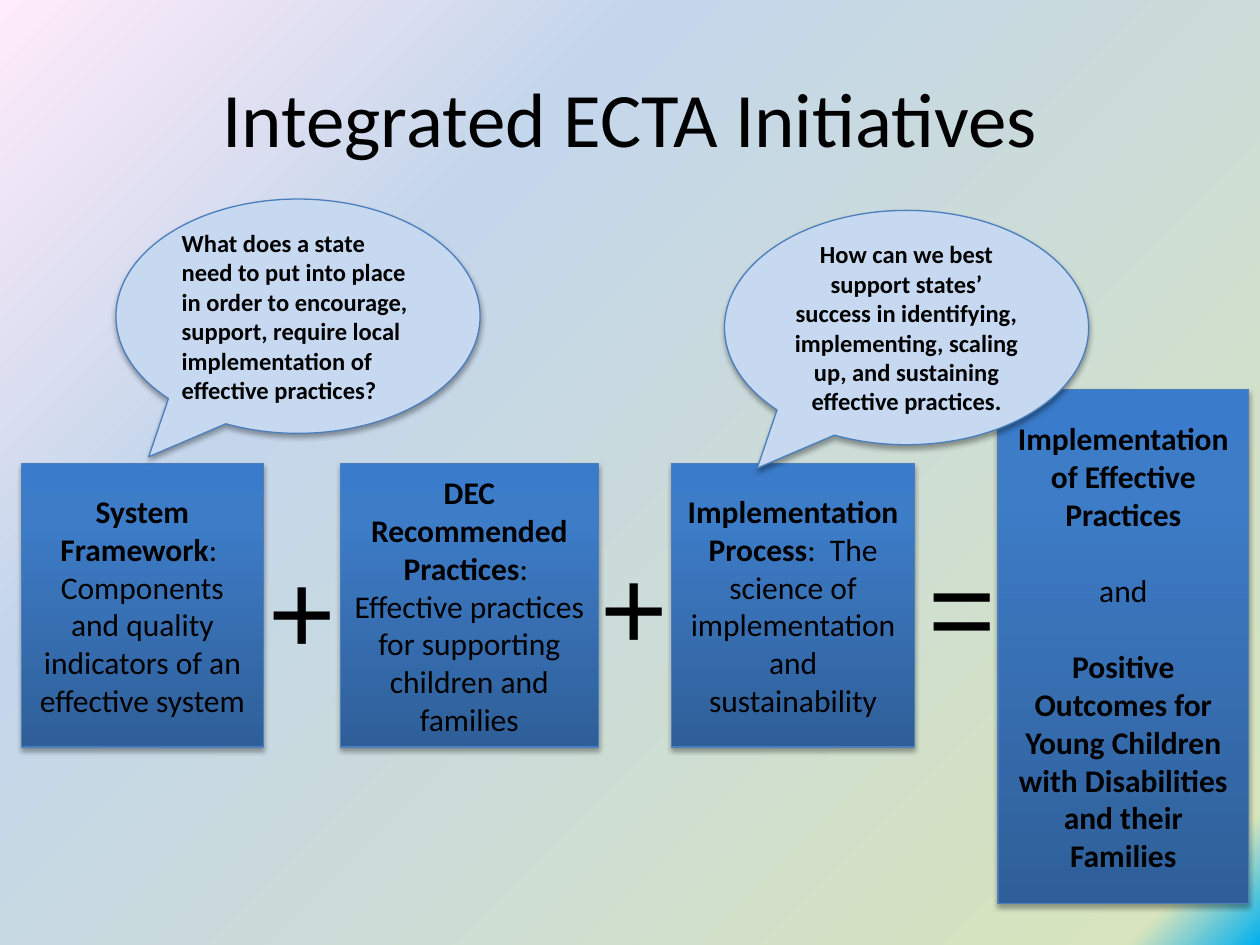
import pptx
import pptx.dml.color
import pptx.enum.shapes
import pptx.enum.text
import pptx.oxml
import pptx.oxml.ns
import pptx.util
from lxml import etree

Inches = pptx.util.Inches
Pt = pptx.util.Pt
RGBColor = pptx.dml.color.RGBColor
SHAPE = pptx.enum.shapes.MSO_SHAPE
ALIGN = pptx.enum.text.PP_ALIGN
ANCHOR = pptx.enum.text.MSO_ANCHOR
AUTO_SIZE = pptx.enum.text.MSO_AUTO_SIZE
qn = pptx.oxml.ns.qn

BLACK = RGBColor(0x00, 0x00, 0x00)
OUTLINE = RGBColor(0x4B, 0x7E, 0xBC)
BUBBLE = RGBColor(0xC6, 0xD9, 0xF1)
PAGE_STOPS = [(0, RGBColor(0x00, 0xB0, 0xF0)), (6, RGBColor(0xD7, 0xE4, 0xBD)),
              (70, RGBColor(0xC4, 0xD6, 0xEB)), (100, RGBColor(0xFF, 0xEB, 0xFA))]
BOX_STOPS = [(0, RGBColor(0x2F, 0x5F, 0x99)), (80, RGBColor(0x3D, 0x7C, 0xC7)),
             (100, RGBColor(0x3A, 0x7C, 0xCB))]
FROM_CORNER = '<a:path path="circle"><a:fillToRect l="100000" t="100000"/></a:path>'
UPWARD = '<a:lin ang="16200000" scaled="0"/>'

TITLE = "Integrated ECTA Initiatives"
INITIATIVES = [
    (0.17, 1.92, "System Framework",
     ":  Components and quality indicators of an effective system"),
    (2.7, 2.05, "DEC Recommended Practices",
     ":  Effective practices for supporting children and families"),
    (5.33, 1.93, "Implementation Process",
     ":  The science of implementation and sustainability"),
]
INITIATIVE_TOP, INITIATIVE_HEIGHT = 3.68, 2.25
OUTCOME_PLACE = (7.92, 3.09, 1.99, 4.08)
OUTCOMES = [
    [("Implementation of Effective Practices", True)],
    [("and", False)],
    [("Positive Outcomes for Young Children with Disabilities and their Families", True)],
]
OPERATORS = [("+", 2.03, 4.23), ("+", 4.67, 4.2), ("=", 7.27, 4.2)]
QUESTIONS = [
    (5.75, 1.67, ALIGN.CENTER,
     "How can we best support states’ success in identifying, implementing, "
     "scaling up, and sustaining effective practices."),
    (0.92, 1.58, ALIGN.LEFT,
     "What does a state need to put into place in order to encourage, support, "
     "require local implementation of effective practices?"),
]


def set_gradient(fill, holder, stops, direction):
    fill.solid()
    marks = "".join(
        f'<a:gs pos="{position * 1000}"><a:srgbClr val="{color}"/></a:gs>'
        for position, color in stops)
    gradient = pptx.oxml.parse_xml(
        f'<a:gradFill {pptx.oxml.ns.nsdecls("a")} rotWithShape="1">'
        f'<a:gsLst>{marks}</a:gsLst>{direction}</a:gradFill>')
    holder.replace(holder.find(qn("a:solidFill")), gradient)


def add_shadow(shape):
    shape.shadow.inherit = False
    effects = shape.element.spPr.find(qn("a:effectLst"))
    shadow = etree.SubElement(
        effects, qn("a:outerShdw"), blurRad=str(Pt(3.1)), dist=str(Pt(1.8)),
        dir="5400000", rotWithShape="0")
    color = etree.SubElement(shadow, qn("a:srgbClr"), val=str(BLACK))
    etree.SubElement(color, qn("a:alpha"), val="35000")


def write(frame, paragraphs, size, align=ALIGN.CENTER, name="Calibri", gap=0):
    frame.word_wrap = True
    for index, spans in enumerate(paragraphs):
        para = frame.add_paragraph() if index else frame.paragraphs[0]
        para.alignment = align
        if index and gap:
            para.space_before = Pt(gap)
        for text, bold in spans:
            span = para.add_run()
            span.text = text
            span.font.color.rgb = BLACK
            for key, value in {"size": Pt(size), "name": name, "bold": bold}.items():
                setattr(span.font, key, value)


def add_panel(page, kind, place):
    shape = page.shapes.add_shape(kind, *map(Inches, place))
    shape.line.color.rgb = OUTLINE
    shape.line.width = Pt(0.75)
    shape.text_frame.vertical_anchor = ANCHOR.MIDDLE
    add_shadow(shape)
    return shape


def add_box(page, place, paragraphs, gap=0):
    box = add_panel(page, SHAPE.RECTANGLE, place)
    set_gradient(box.fill, box.element.spPr, BOX_STOPS, UPWARD)
    write(box.text_frame, paragraphs, 18, gap=gap)


def add_question(page, left, top, align, text):
    bubble = add_panel(page, SHAPE.OVAL_CALLOUT, (left, top, 2.89, 1.86))
    bubble.adjustments[0] = -0.41
    bubble.adjustments[1] = 0.6
    bubble.fill.solid()
    bubble.fill.fore_color.rgb = BUBBLE
    write(bubble.text_frame, [[(text, True)]], 14, align)


def add_operator(page, sign, left, top):
    box = page.shapes.add_textbox(*map(Inches, (left, top, 1.14, 1.21)))
    write(box.text_frame, [[(sign, False)]], 66, ALIGN.LEFT, "Arial")
    box.text_frame.auto_size = AUTO_SIZE.SHAPE_TO_FIT_TEXT


def main():
    deck = pptx.Presentation()
    deck.slide_width, deck.slide_height = Inches(10), Inches(7.5)
    page = deck.slides.add_slide(deck.slide_layouts[5])
    backdrop = page.background.fill
    backdrop.solid()
    set_gradient(backdrop, page.element.find(".//" + qn("p:bgPr")), PAGE_STOPS, FROM_CORNER)

    title = page.shapes.title
    title.left, title.top, title.width, title.height = map(Inches, (0.5, 0.3, 9, 1.25))
    title.text_frame.vertical_anchor = ANCHOR.MIDDLE
    write(title.text_frame, [[(TITLE, False)]], 44)

    for left, width, heading, detail in INITIATIVES:
        add_box(page, (left, INITIATIVE_TOP, width, INITIATIVE_HEIGHT),
                [[(heading, True), (detail, False)]])
    add_box(page, OUTCOME_PLACE, OUTCOMES, gap=22)
    for operator in OPERATORS:
        add_operator(page, *operator)
    for question in QUESTIONS:
        add_question(page, *question)
    deck.save("out.pptx")


if __name__ == "__main__":
    main()
